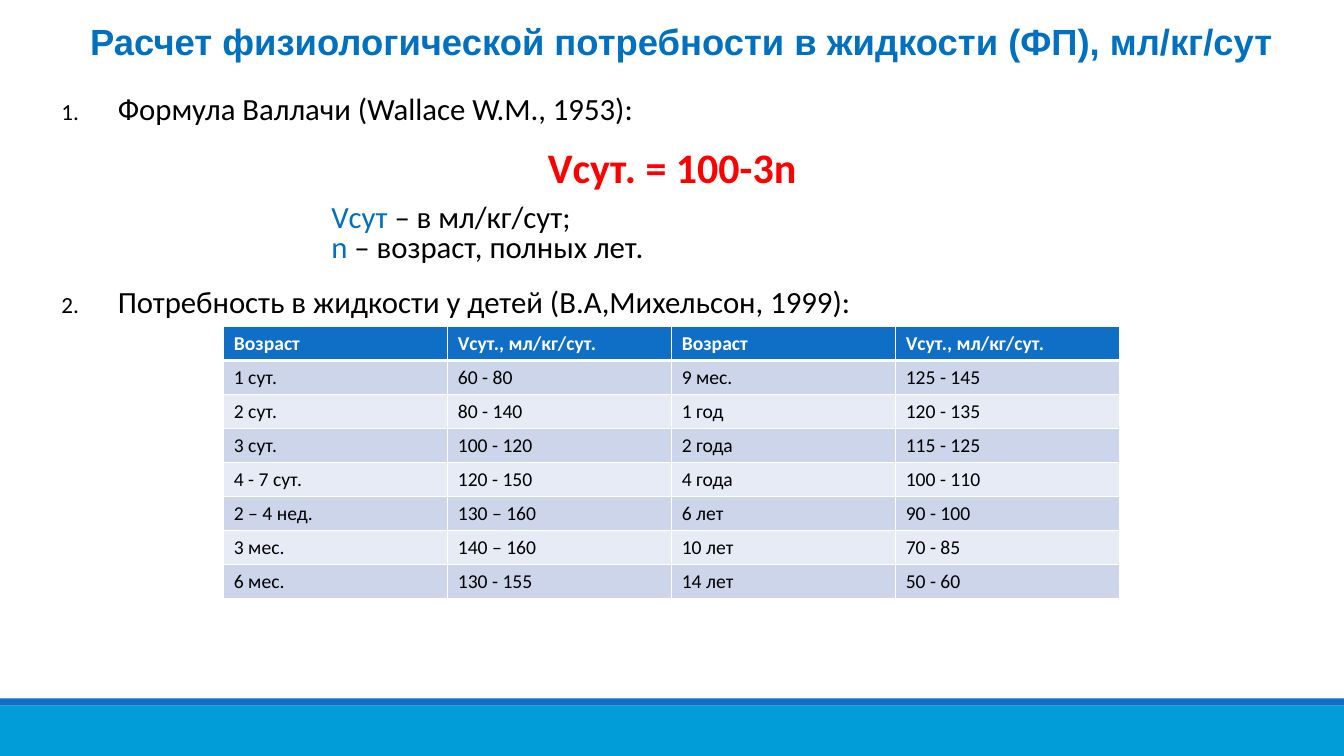
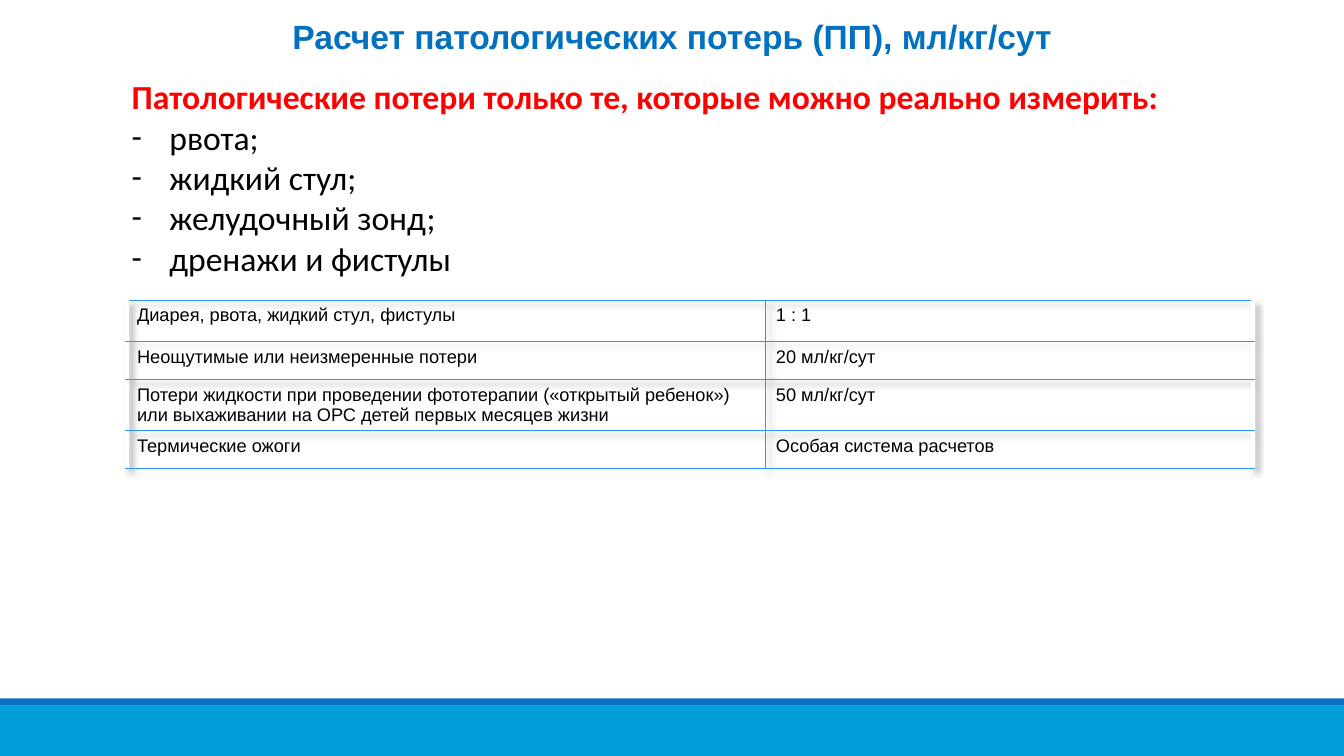
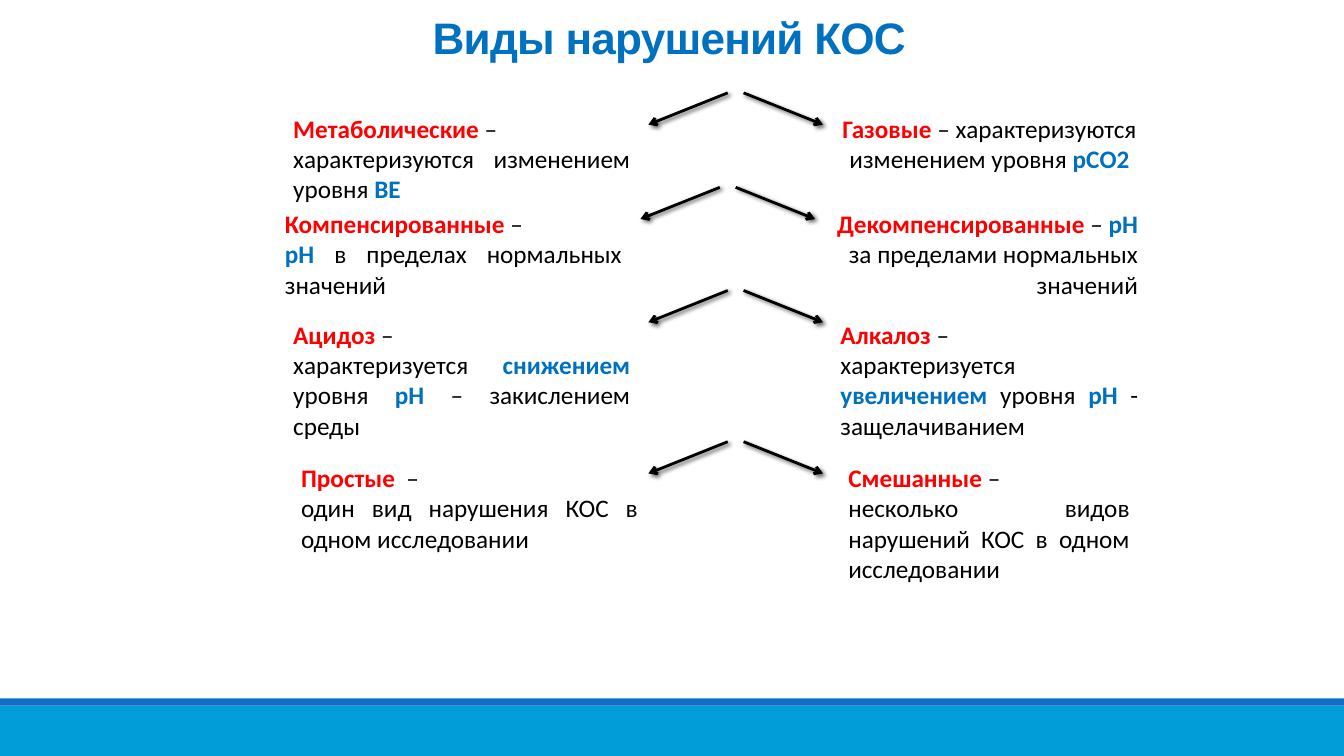
from dataclasses import dataclass
from typing import Any, NamedTuple

from lxml import etree
from pptx import Presentation
from pptx.dml.color import RGBColor
from pptx.enum.shapes import MSO_CONNECTOR, MSO_SHAPE
from pptx.enum.text import MSO_ANCHOR, MSO_AUTO_SIZE, PP_ALIGN
from pptx.oxml.ns import qn
from pptx.util import Cm, Pt

LEFT, MID, RIGHT, EVEN = PP_ALIGN.LEFT, PP_ALIGN.CENTER, PP_ALIGN.RIGHT, PP_ALIGN.JUSTIFY
TOP, LOW = MSO_ANCHOR.TOP, MSO_ANCHOR.BOTTOM
FIXED = MSO_AUTO_SIZE.NONE
RECT, LINE = MSO_SHAPE.RECTANGLE, MSO_CONNECTOR.STRAIGHT


@dataclass(frozen=True)
class Theme:
    black: str = "000000"
    white: str = "FFFFFF"
    red: str = "FF0000"
    blue: str = "0070C0"
    band: str = "009DD9"
    deep: str = "0F6FC6"
    dark: str = "CCD5EA"
    pale: str = "E7EBF5"
    rule: str = "2D96FE"
    head: str = "Arial"
    body: str = "Calibri"
    giant: float = 31.5
    huge: float = 30
    title: float = 26
    large: float = 24
    item: float = 22
    note: float = 18
    cell: float = 14
    small: float = 13


THEME = Theme()


class Box(NamedTuple):
    left: float
    top: float
    width: float
    height: float


class Bit(NamedTuple):
    text: str
    ink: str = THEME.black
    bold: bool = False


class Para(NamedTuple):
    bits: list[Bit]
    align: Any = LEFT
    indent: float = 0
    mark: str = ""
    start: int = 0
    pitch: float | None = None


class Edge(NamedTuple):
    ink: str
    width: float


class Side(NamedTuple):
    left: float
    width: float
    paras: list[Para]


class Pair(NamedTuple):
    fork: float
    rise: float
    top: float
    height: float
    sides: tuple[Side, Side]


def setup(item: Any, values: dict[str, Any]) -> None:
    for name, value in values.items():
        setattr(item, name, value)


def place(box: Box) -> dict[str, Any]:
    return {name: Cm(value) for name, value in box._asdict().items()}


def node(root: Any, tag: str, **values: Any) -> Any:
    return etree.SubElement(root, qn(tag), {k: str(v) for k, v in values.items()})


def paint(root: Any, ink: str) -> Any:
    return node(node(root, "a:solidFill"), "a:srgbClr", val=ink)


def shade(root: Any, blur: float, gap: float, alpha: int) -> None:
    cast = node(root, "a:outerShdw", blurRad=Pt(blur), dist=Pt(gap),
                dir=2700000, algn="tl", rotWithShape=0)
    node(node(cast, "a:srgbClr", val=THEME.black), "a:alpha", val=alpha * 1000)


def red(text: str) -> Bit:
    return Bit(text, THEME.red, True)


def blue(text: str) -> Bit:
    return Bit(text, THEME.blue, True)


def bullet(props: Any, para: Para) -> None:
    if para.start:
        node(node(props, "a:buClr"), "a:srgbClr", val=THEME.black)
        node(props, "a:buSzPct", val=75000)
        node(props, "a:buFont", typeface=THEME.body)
        node(props, "a:buAutoNum", type="arabicPeriod", startAt=para.start)
    elif para.mark:
        node(props, "a:buFont", typeface=THEME.body)
        node(props, "a:buChar", char=para.mark)


def write(frame: Any, paras: list[Para], size: float, face: str) -> None:
    for index, para in enumerate(paras):
        line = frame.add_paragraph() if index else frame.paragraphs[0]
        setup(line, {"alignment": para.align, "line_spacing": para.pitch})
        props = line._p.get_or_add_pPr()
        if para.indent:
            props.set("marL", str(Cm(para.indent)))
            props.set("indent", str(-Cm(para.indent)))
        bullet(props, para)
        for bit in para.bits:
            run = line.add_run()
            run.text = bit.text
            setup(run.font, {"name": face, "size": Pt(size), "bold": bit.bold})
            run.font.color.rgb = RGBColor.from_string(bit.ink)


def label(slide: Any, box: Box, paras: list[Para], size: float) -> None:
    frame = slide.shapes.add_textbox(**place(box)).text_frame
    setup(frame, {"word_wrap": True, "auto_size": FIXED})
    write(frame, paras, size, THEME.body)


def page(deck: Any, text: str, box: Box, size: float, anchor: Any = TOP,
         pitch: float | None = None) -> Any:
    slide = deck.slides.add_slide(deck.slide_layouts[5])
    title = slide.shapes.title
    setup(title, place(box))
    setup(title.text_frame, {"word_wrap": True, "auto_size": FIXED,
                             "vertical_anchor": anchor})
    write(title.text_frame, [Para([blue(text)], MID, pitch=pitch)], size, THEME.head)
    return slide


def bands(deck: Any, slide: Any) -> None:
    tree = deck.slide_master.shapes.element
    parts = ((Box(0, 17.78, 33.87, 1.27), THEME.band),
             (Box(0, 17.6, 33.87, 0.18), THEME.deep))
    for index, (box, ink) in enumerate(parts):
        strip = slide.shapes.add_shape(RECT, **place(box))
        strip.shadow.inherit = False
        strip.fill.solid()
        strip.fill.fore_color.rgb = RGBColor.from_string(ink)
        strip.line.fill.background()
        strip.element.nvSpPr.cNvPr.set("id", str(20 + index))
        tree.insert(2 + index, strip.element)


def border(cell: Any, edges: dict[str, Edge]) -> None:
    props = cell._tc.get_or_add_tcPr()
    for side in "LRTB":
        edge = edges[side]
        paint(node(props, f"a:ln{side}", w=Pt(edge.width)), edge.ink)


def grid(slide: Any, box: Box, rows: int, cols: int) -> Any:
    table = slide.shapes.add_table(rows, cols, **place(box)).table
    setup(table, {"first_row": False, "horz_banding": False})
    return table


def needs(slide: Any, rows: list[tuple[str, ...]]) -> None:
    table = grid(slide, Box(5.64, 8.23, 22.58, 6.78), len(rows), len(rows[0]))
    thin, thick = Edge(THEME.white, 1), Edge(THEME.white, 3)
    for r, row in enumerate(rows):
        fill = (THEME.dark if r % 2 else THEME.pale) if r else THEME.deep
        ink = THEME.black if r else THEME.white
        for c, text in enumerate(row):
            cell = table.cell(r, c)
            border(cell, {"L": thin, "R": thin, "T": thick if r == 1 else thin,
                          "B": thin if r else thick})
            cell.fill.solid()
            cell.fill.fore_color.rgb = RGBColor.from_string(fill)
            write(cell.text_frame, [Para([Bit(text, ink, r == 0)])], THEME.cell, THEME.body)


def losses(slide: Any, rows: list[tuple[str, str]]) -> None:
    table = grid(slide, Box(3.2, 7.57, 28.37, 3.92), len(rows), 2)
    for col, width in zip(table.columns, (16.1, 12.27)):
        col.width = Cm(width)
    for r, line in enumerate(table.rows):
        line.height = Cm(0.96 if r else 1.04)
    cast = node(table._tbl.tblPr, "a:effectLst")
    shade(cast, 4, 3, 40)
    table._tbl.tblPr.insert(0, cast)
    thin, thick = Edge(THEME.rule, 0.75), Edge(THEME.white, 3)
    for r, row in enumerate(rows):
        for c, text in enumerate(row):
            cell = table.cell(r, c)
            border(cell, {"L": thin if c else thick, "R": thick if c else thin,
                          "T": thin, "B": thin})
            cell.fill.background()
            write(cell.text_frame, [Para([Bit(text)])], THEME.small, THEME.head)


def arrow(slide: Any, fork: float, top: float, way: int) -> None:
    line = slide.shapes.add_connector(LINE, Cm(fork + 0.2 * way), Cm(top),
                                      Cm(fork + 2.2 * way), Cm(top + 0.8))
    setup(line.line, {"width": Pt(2)})
    line.line.color.rgb = RGBColor.from_string(THEME.black)
    props = line.element.spPr
    node(props.find(qn("a:ln")), "a:tailEnd", type="arrow")
    shade(node(props, "a:effectLst"), 3, 2, 60)


def fluid(deck: Any) -> Any:
    slide = page(deck, "Расчет физиологической потребности в жидкости (ФП), мл/кг/сут",
                 Box(1.3, 0.36, 31.78, 1.6), THEME.title)
    items = ((Box(1.3, 2.13, 15.2, 1.12), "Формула Валлачи (Wallace W.M., 1953):"),
             (Box(1.3, 6.99, 23.75, 1.24),
              "Потребность в жидкости у детей (В.А,Михельсон, 1999):"))
    for start, (box, text) in enumerate(items, 1):
        label(slide, box, [Para([Bit(text)], EVEN, 1.42, start=start)], THEME.item)
    label(slide, Box(5.51, 3.43, 22.86, 1.45), [Para([red("Vсут. = 100-3n")], MID)],
          THEME.huge)
    terms = (("Vсут ", "– в мл/кг/сут;"), ("n ", "– возраст, полных лет."))
    label(slide, Box(8.1, 5.05, 17.58, 1.75),
          [Para([Bit(sign, THEME.blue), Bit(text)], indent=1.7, pitch=0.8)
           for sign, text in terms], THEME.item)
    needs(slide, [
        ("Возраст", "Vсут., мл/кг/сут.") * 2,
        ("1 сут.", "60 - 80", "9 мес.", "125 - 145"),
        ("2 сут.", "80 - 140", "1 год", "120 - 135"),
        ("3 сут.", "100 - 120", "2 года", "115 - 125"),
        ("4 - 7 сут.", "120 - 150", "4 года", "100 - 110"),
        ("2 – 4 нед.", "130 – 160", "6 лет", "90 - 100"),
        ("3 мес.", "140 – 160", "10 лет", "70 - 85"),
        ("6 мес.", "130 - 155", "14 лет", "50 - 60"),
    ])
    return slide


def drain(deck: Any) -> None:
    slide = page(deck, "Расчет патологических потерь (ПП), мл/кг/сут",
                 Box(4.24, 0.28, 25.4, 1.17), THEME.large)
    losses(slide, [
        ("Диарея, рвота, жидкий стул, фистулы", "1 : 1"),
        ("Неощутимые или неизмеренные потери", "20 мл/кг/сут"),
        ("Потери жидкости при проведении фототерапии («открытый ребенок») "
         "или выхаживании на ОРС детей первых месяцев жизни", "50 мл/кг/сут"),
        ("Термические ожоги", "Особая система расчетов"),
    ])
    lead = "Патологические потери только те, которые можно реально измерить:"
    kinds = ("рвота;", "жидкий стул;", "желудочный зонд;", "дренажи и фистулы")
    label(slide, Box(3.07, 1.8, 28.6, 5.38),
          [Para([red(lead)], EVEN),
           *(Para([Bit(kind)], EVEN, 0.95, "-") for kind in kinds)], THEME.large)


def kinds(deck: Any) -> None:
    slide = page(deck, "Виды нарушений КОС", Box(6.45, 0.33, 20.83, 1.4),
                 THEME.giant, LOW, 0.85)
    title = slide.shapes.title.text_frame.paragraphs[0].runs[0]
    title.font._element.set("spc", "-50")
    dash = Bit(" – ")
    pairs = (
        Pair(18.54, 2.34, 2.72, 2.57, (
            Side(7.14, 8.99, [
                Para([red("Метаболические"), dash], EVEN),
                Para([Bit("характеризуются изменением уровня "), blue("ВЕ")], EVEN)]),
            Side(20.73, 8.41, [
                Para([red("Газовые"), Bit(" – характеризуются изменением уровня "),
                      blue("рСО2")], MID)]))),
        Pair(18.34, 4.72, 5.13, 2.57, (
            Side(6.93, 8.99, [
                Para([red("Компенсированные"), dash], EVEN),
                Para([blue("рН"), Bit(" в пределах нормальных значений")], EVEN)]),
            Side(20.52, 8.41, [
                Para([red("Декомпенсированные"), dash, blue("рН"),
                      Bit(" за пределами нормальных значений")], RIGHT)]))),
        Pair(18.54, 7.32, 7.92, 3.33, (
            Side(7.14, 8.99, [
                Para([red("Ацидоз"), dash], EVEN),
                Para([Bit("характеризуется "), blue("снижением"), Bit(" уровня "),
                      blue("рН"), Bit(" – закислением среды")], EVEN)]),
            Side(20.93, 8, [
                Para([red("Алкалоз"), dash], EVEN),
                Para([Bit("характеризуется "), blue("увеличением"), Bit(" уровня "),
                      blue("рН"), Bit(" - защелачиванием")], EVEN)]))),
        Pair(18.54, 11.13, 11.53, 3.33, (
            Side(7.34, 8.99, [
                Para([red("Простые "), dash], EVEN),
                Para([Bit("один вид нарушения КОС в одном исследовании")], EVEN)]),
            Side(21.13, 7.59, [
                Para([red("Смешанные"), dash], EVEN),
                Para([Bit("несколько видов нарушений КОС в одном исследовании")], EVEN)]))),
    )
    for pair in pairs:
        for way, side in zip((-1, 1), pair.sides):
            arrow(slide, pair.fork, pair.rise, way)
            label(slide, Box(side.left, pair.top, side.width, pair.height),
                  side.paras, THEME.note)


def main() -> None:
    deck = Presentation()
    setup(deck, {"slide_width": Cm(33.87), "slide_height": Cm(19.05)})
    bands(deck, fluid(deck))
    drain(deck)
    kinds(deck)
    deck.save("out.pptx")


if __name__ == "__main__":
    main()
